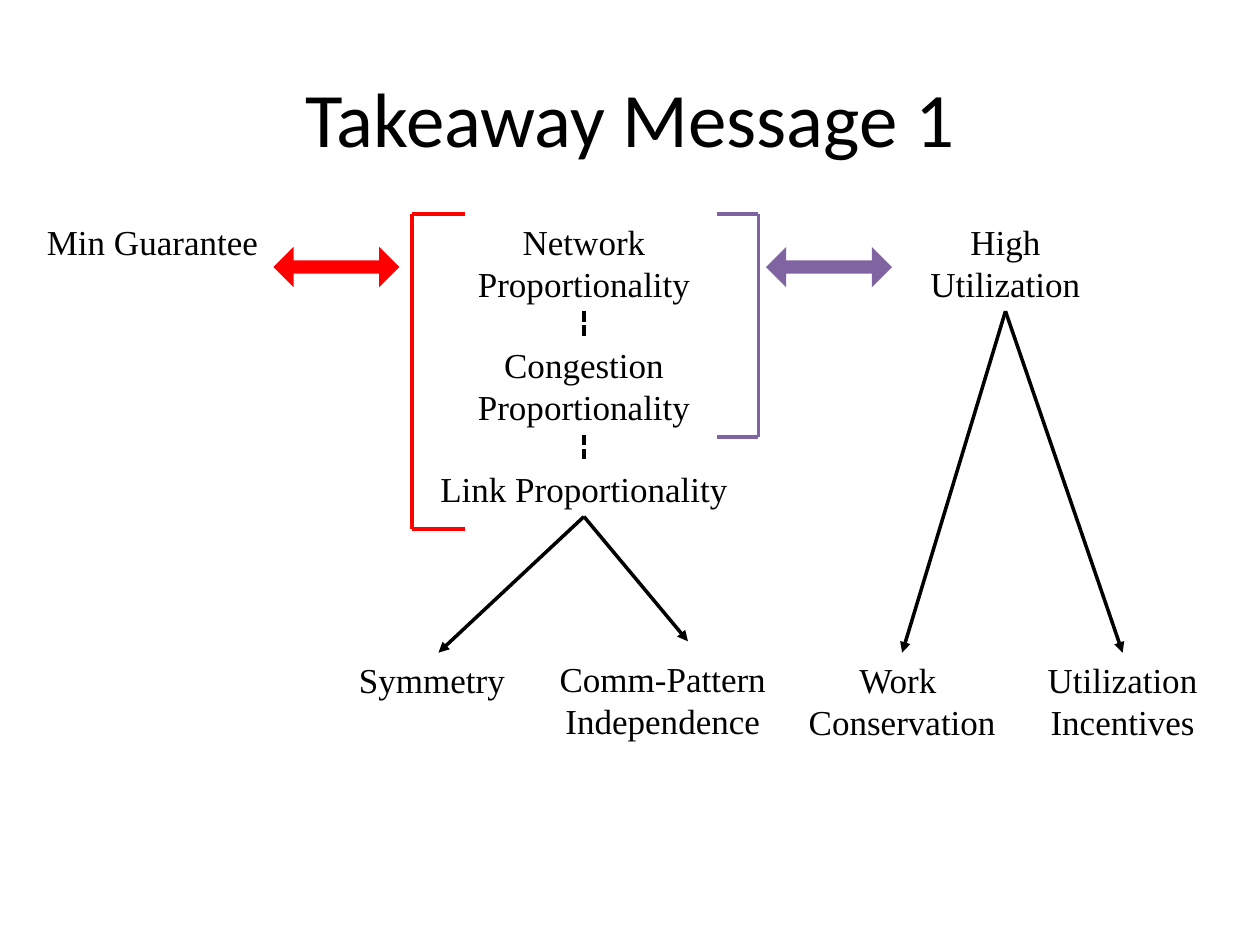
from lxml.etree import SubElement
from pptx import Presentation
from pptx.dml.color import RGBColor
from pptx.enum.dml import MSO_LINE
from pptx.enum.shapes import MSO_CONNECTOR, MSO_SHAPE
from pptx.enum.text import MSO_ANCHOR, MSO_AUTO_SIZE, PP_ALIGN
from pptx.oxml.ns import qn
from pptx.util import Inches, Pt

BLACK = RGBColor(0x00, 0x00, 0x00)
RED = RGBColor(0xFF, 0x00, 0x00)
PURPLE = RGBColor(0x80, 0x64, 0xA2)

# Square grid: 100 columns by 75 rows
SLIDE_WIDTH, SLIDE_HEIGHT = Inches(10), Inches(7.5)
COL, ROW = SLIDE_WIDTH / 100, SLIDE_HEIGHT / 75
ONE_LINE, TWO_LINES = 4.4, 7.7
TOP, BOTTOM = 0, 2


def place(box, x, y):
    """Turn a grid position relative to a box into slide lengths."""
    return round((box[0] + x) * COL), round((box[1] + y) * ROW)


def add_label(shapes, box, x, y, width, height, text, align=PP_ALIGN.CENTER):
    label = shapes.add_textbox(*place(box, x, y), round(width * COL), round(height * ROW))
    frame = label.text_frame
    frame.text = text
    frame.word_wrap = True
    frame.auto_size = MSO_AUTO_SIZE.SHAPE_TO_FIT_TEXT
    for paragraph in frame.paragraphs:
        paragraph.alignment = align
        for run in paragraph.runs:
            run.font.name = "Times New Roman"
            run.font.size = Pt(20)
            run.font.color.rgb = BLACK
    return label


def add_line(shapes, start, end, color=BLACK, dashed=False, arrow=False):
    connector = shapes.add_connector(MSO_CONNECTOR.STRAIGHT, *start, *end)
    connector.line.color.rgb = color
    connector.line.width = Pt(2)
    if dashed:
        connector.line.dash_style = MSO_LINE.SQUARE_DOT
    if arrow:
        SubElement(connector.line._get_or_add_ln(), qn("a:tailEnd"), type="triangle")
    SubElement(connector._element.spPr, qn("a:effectLst"))
    return connector


def join(shapes, upper, lower, **style):
    """Run a line from the bottom of one label to the top of another."""
    connector = add_line(shapes, (0, 0), (0, 0), **style)
    connector.begin_connect(upper, BOTTOM)
    connector.end_connect(lower, TOP)


def add_bracket(shapes, box, spine, tip, height, color):
    bracket = shapes.add_group_shape().shapes
    for y in (0, height):
        add_line(bracket, place(box, spine, y), place(box, tip, y), color)
    add_line(bracket, place(box, spine, 0), place(box, spine, height), color)


def add_double_arrow(shapes, box, x, color):
    arrow = shapes.add_shape(MSO_SHAPE.LEFT_RIGHT_ARROW, *place(box, x, 2.6),
                             round(10 * COL), round(3.2 * ROW))
    arrow.adjustments[0], arrow.adjustments[1] = 0.33, 0.5
    arrow.fill.solid()
    arrow.fill.fore_color.rgb = color
    arrow.line.fill.background()
    arrow.shadow.inherit = False


def add_title(slide, box, width, height):
    title = slide.shapes.title
    title.left, title.top = place(box, 0, 0)
    title.width, title.height = round(width * COL), round(height * ROW)
    title.text_frame.text = "Takeaway Message 1"
    title.text_frame.vertical_anchor = MSO_ANCHOR.MIDDLE
    heading = title.text_frame.paragraphs[0]
    heading.alignment = PP_ALIGN.CENTER
    font = heading.runs[0].font
    font.name, font.size, font.color.rgb = "Calibri", Pt(44), BLACK


def add_guarantee(shapes, box):
    add_label(shapes, box, 0, 0, 19.2, TWO_LINES, "Min Guarantee")
    add_double_arrow(shapes, box, 19.2, RED)


def add_proportionality(shapes, box):
    add_bracket(shapes, box, 5.2, 9.4, 25, RED)
    add_bracket(shapes, box, 32.7, 29.4, 17.7, PURPLE)

    # Chain of proportionality levels
    levels = [("Network Proportionality", TWO_LINES),
              ("Congestion Proportionality", TWO_LINES),
              ("Link Proportionality", ONE_LINE)]
    chain = [add_label(shapes, box, 5, row * 9.8, 27.7, height, text)
             for row, (text, height) in enumerate(levels)]
    for upper, lower in zip(chain, chain[1:]):
        join(shapes, upper, lower, dashed=True)

    # Properties that follow from link proportionality
    symmetry = add_label(shapes, box, 0, 34.8, 14.6, ONE_LINE, "Symmetry", PP_ALIGN.LEFT)
    add_label(shapes, box, 15, 34.7, 20.2, TWO_LINES, "Comm-Pattern\nIndependence")
    join(shapes, chain[-1], symmetry, arrow=True)
    to_independence = add_line(shapes, place(box, 18.8, 24), place(box, 27.1, 33.9), arrow=True)
    to_independence.begin_connect(chain[-1], BOTTOM)


def add_utilization(shapes, box):
    add_double_arrow(shapes, box, 0, PURPLE)
    utilization = add_label(shapes, box, 9.2, 0, 19.6, TWO_LINES, "High Utilization")
    parts = [(0.9, 19.8, "Work \nConservation"), (21, 14.6, "Utilization\nIncentives")]
    for x, width, text in parts:
        part = add_label(shapes, box, x, 34.8, width, TWO_LINES, text)
        join(shapes, utilization, part, arrow=True)


def main():
    presentation = Presentation()
    presentation.slide_width, presentation.slide_height = SLIDE_WIDTH, SLIDE_HEIGHT
    slide = presentation.slides.add_slide(presentation.slide_layouts[5])
    add_title(slide, (5, 3), 90, 12.5)
    add_guarantee(slide.shapes, (2.5, 17))
    add_proportionality(slide.shapes, (27.5, 17))
    add_utilization(slide.shapes, (60.8, 17))
    presentation.save("out.pptx")


if __name__ == "__main__":
    main()
